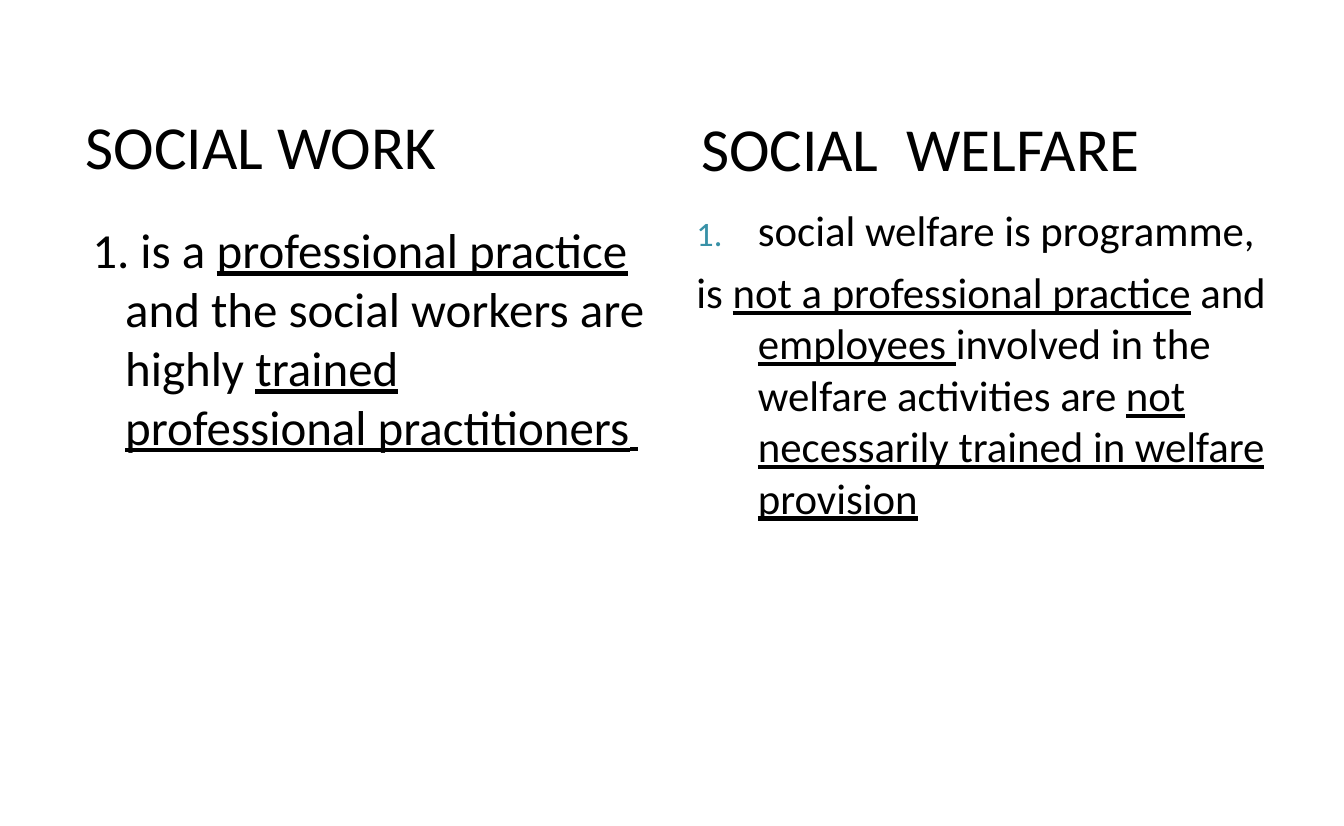
from dataclasses import dataclass

from lxml import etree
from pptx import Presentation
from pptx.dml.color import RGBColor
from pptx.enum import dml, text
from pptx.oxml import ns
from pptx.util import Cm, Pt


@dataclass(frozen=True)
class Theme:
    font: str = "Calibri"
    ink: str = "000000"
    paper: str = "FFFFFF"
    accent: str = "3891A7"
    head: int = 40
    work: int = 32
    welfare: int = 28
    tail: int = 24
    edge: float = 0.85


THEME = Theme()


def add_box(slide, left, top, width, height):
    box = slide.shapes.add_textbox(Cm(left), Cm(top), Cm(width), Cm(height))
    box.text_frame.word_wrap = True
    box.line.color.rgb = RGBColor.from_string(THEME.paper)
    box.line.width = Pt(THEME.edge)
    return box


def add_runs(para, runs, size):
    """Add (words, underlined) pairs, with an optional third item for size."""
    for words, under, *own in runs:
        run = para.add_run()
        run.text = words
        font = run.font
        font.name = THEME.font
        font.size = Pt(own[0] if own else size)
        font.underline = under
        font.color.rgb = RGBColor.from_string(THEME.ink)


def indent(para, left, first, before):
    props = para._p.get_or_add_pPr()
    props.set("marL", str(Cm(left)))
    props.set("indent", str(Cm(first)))
    para.space_before = Pt(before)


def number(para):
    """Give the paragraph a small coloured automatic number."""
    props = para._p.get_or_add_pPr()
    color = etree.SubElement(props, ns.qn("a:buClr"))
    etree.SubElement(color, ns.qn("a:srgbClr"), val=THEME.accent)
    etree.SubElement(props, ns.qn("a:buSzPct"), val="80000")
    etree.SubElement(props, ns.qn("a:buFont"), typeface=THEME.font)
    etree.SubElement(props, ns.qn("a:buAutoNum"), type="arabicPeriod")


def add_head(slide, words, *place):
    box = add_box(slide, *place)
    box.fill.solid()
    box.fill.fore_color.rgb = RGBColor.from_string(THEME.paper)
    box.text_frame.vertical_anchor = text.MSO_ANCHOR.MIDDLE
    para = box.text_frame.paragraphs[0]
    indent(para, 0.18, 0, 1)
    add_runs(para, [(words, False)], THEME.head)


def add_body(slide, paras, size, left, first, *place):
    """Add a dashed box of paragraphs and return its paragraphs."""
    box = add_box(slide, *place)
    box.line.dash_style = dml.MSO_LINE.DASH
    frame = box.text_frame
    for i, runs in enumerate(paras):
        para = frame.add_paragraph() if i else frame.paragraphs[0]
        indent(para, left, first, 7)
        add_runs(para, runs, size)
    return frame.paragraphs


def main():
    deck = Presentation()
    deck.slide_width, deck.slide_height = Cm(31.01), Cm(19.05)
    slide = deck.slides.add_slide(deck.slide_layouts[6])

    add_head(slide, "SOCIAL WORK", 1.55, 1.7, 13.69, 3.28)
    add_head(slide, "SOCIAL  WELFARE", 15.75, 1.98, 13.72, 2.84)

    work = [[
        ("1. is a ", False),
        ("professional practice ", True),
        ("and the social workers are highly ", False),
        ("trained professional practitioners", True),
        (" ", True, THEME.tail),
    ]]
    add_body(slide, work, THEME.work, 1.09, -0.76, 1.55, 4.95, 13.64, 9.17)

    welfare = [
        [("social welfare is programme,", False)],
        [
            ("is ", False),
            ("not a professional practice", True),
            (" and ", False),
            ("employees ", True),
            ("involved in the welfare activities are ", False),
            ("not necessarily trained in welfare provision", True),
        ],
    ]
    paras = add_body(slide, welfare, THEME.welfare, 1.42, -1.42,
                     15.82, 4.57, 13.64, 9.55)
    number(paras[0])

    deck.save("out.pptx")


if __name__ == "__main__":
    main()
